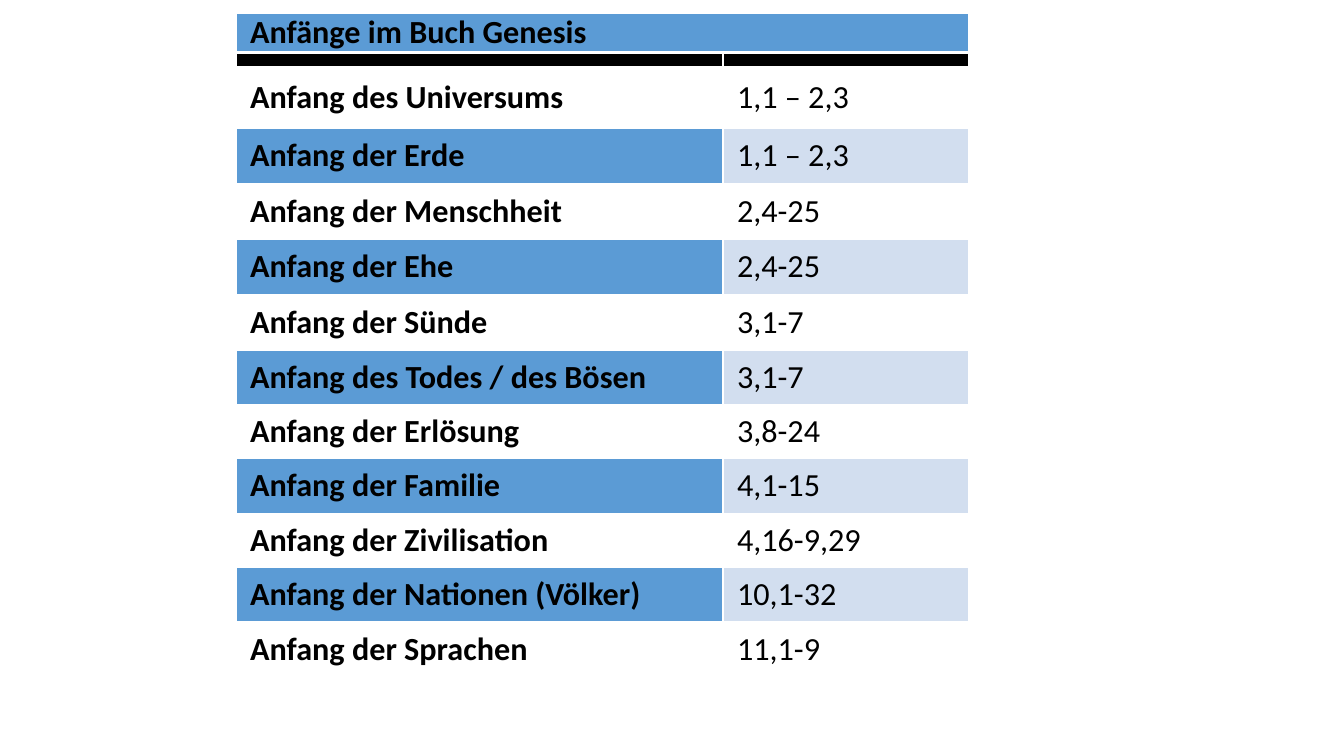
from lxml.etree import SubElement
from pptx import Presentation
from pptx.dml.color import RGBColor
from pptx.enum.text import MSO_ANCHOR
from pptx.oxml.ns import qn
from pptx.util import Inches, Pt

COLORS = {"blue": "5B9BD5", "pale": "D2DEEF", "white": "FFFFFF", "black": "000000"}
BEGINNINGS = [
    ("Anfang des Universums", "1,1 – 2,3"),
    ("Anfang der Erde", "1,1 – 2,3"),
    ("Anfang der Menschheit", "2,4-25"),
    ("Anfang der Ehe", "2,4-25"),
    ("Anfang der Sünde", "3,1-7"),
    ("Anfang des Todes / des Bösen", "3,1-7"),
    ("Anfang der Erlösung", "3,8-24"),
    ("Anfang der Familie", "4,1-15"),
    ("Anfang der Zivilisation", "4,16-9,29"),
    ("Anfang der Nationen (Völker)", "10,1-32"),
    ("Anfang der Sprachen", "11,1-9"),
]
COLUMN_WIDTHS = [4.83, 2.44]
ROW_HEIGHTS = [0.39, 0.14, 0.61] + [0.55] * 4 + [0.54] * 6


def format_cell(cell, text="", fill="white", bold=False, anchor=MSO_ANCHOR.MIDDLE, top=1, bottom=1):
    cell.margin_left = cell.margin_right = Inches(0.14)
    cell.margin_top = cell.margin_bottom = 0
    cell.vertical_anchor = anchor
    properties = cell._tc.get_or_add_tcPr()
    for side, width in (("L", 1), ("R", 1), ("T", top), ("B", bottom)):
        line = SubElement(properties, qn(f"a:ln{side}"), w=str(Pt(width)))
        color = SubElement(line, qn("a:solidFill"))
        SubElement(color, qn("a:srgbClr"), val=COLORS["white"])
    cell.fill.solid()
    cell.fill.fore_color.rgb = RGBColor.from_string(COLORS[fill])
    para = cell.text_frame.paragraphs[0]
    if text:
        span = para.add_run()
        span.text = text
        span.font.name = "Calibri"
        span.font.size = Pt(23)
        span.font.bold = bold
        span.font.color.rgb = RGBColor.from_string(COLORS["black"])
    else:
        SubElement(para._p, qn("a:endParaRPr"), sz="600")


deck = Presentation()
deck.slide_width, deck.slide_height = Inches(13.33), Inches(7.5)
page = deck.slides.add_slide(deck.slide_layouts[6])

frame = page.shapes.add_table(
    len(ROW_HEIGHTS), len(COLUMN_WIDTHS), Inches(2.34), Inches(0.13),
    Inches(sum(COLUMN_WIDTHS)), Inches(sum(ROW_HEIGHTS)))
table = frame.table
table.first_row = table.horz_banding = False
for column, width in zip(table.columns, COLUMN_WIDTHS):
    column.width = Inches(width)
for row, height in zip(table.rows, ROW_HEIGHTS):
    row.height = Inches(height)

table.cell(0, 0).merge(table.cell(0, 1))
for column, heading in enumerate(["Anfänge im Buch Genesis", ""]):
    format_cell(table.cell(0, column), heading, fill="blue", bold=True,
                anchor=MSO_ANCHOR.TOP, bottom=3)
    format_cell(table.cell(1, column), fill="black", top=3)

for index, (topic, passage) in enumerate(BEGINNINGS):
    topic_fill, passage_fill = ("blue", "pale") if index % 2 else ("white", "white")
    format_cell(table.cell(index + 2, 0), topic, fill=topic_fill, bold=True)
    format_cell(table.cell(index + 2, 1), passage, fill=passage_fill)

deck.save("out.pptx")
